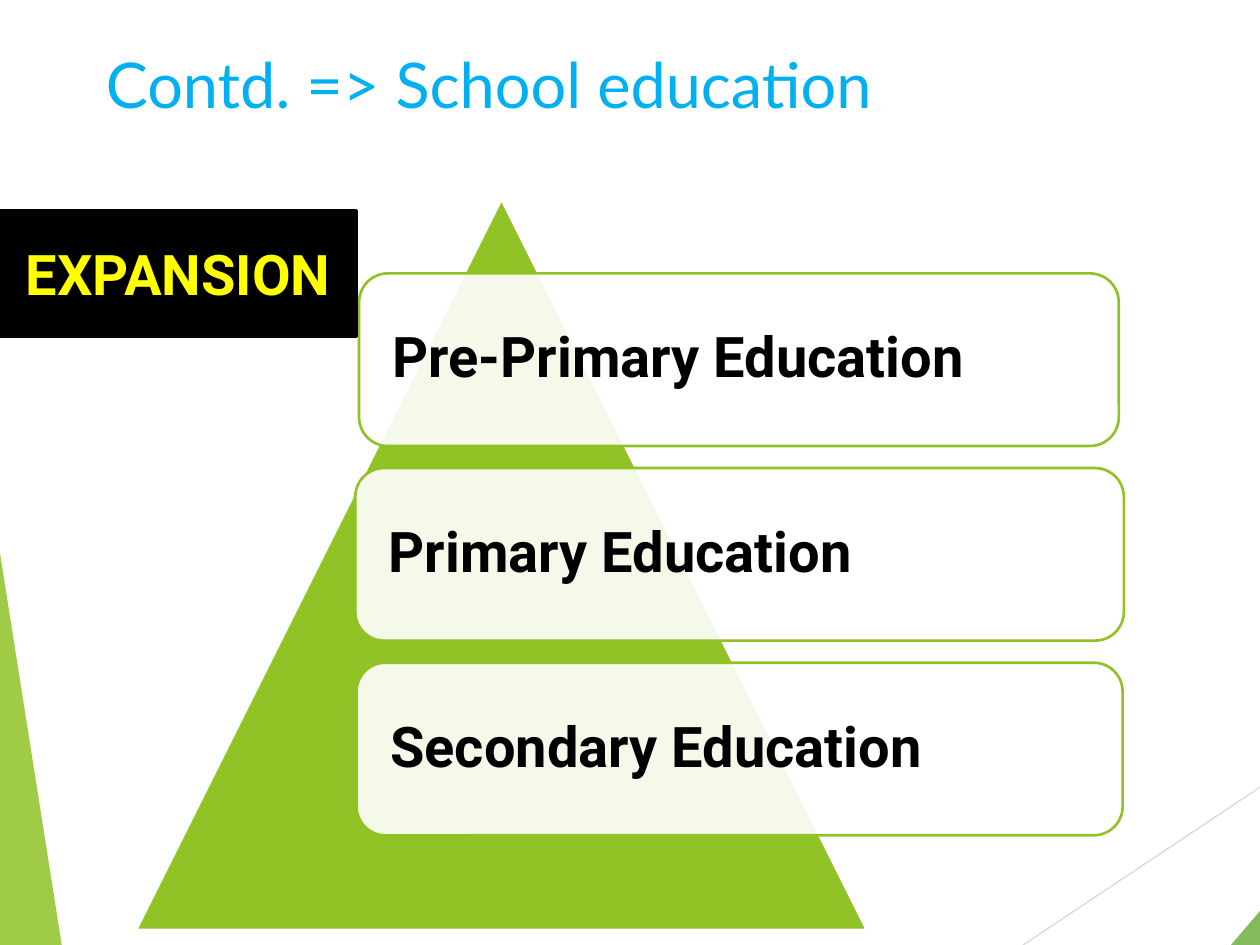
import dataclasses

import lxml.etree
import pptx
import pptx.dml.color
import pptx.enum.shapes
import pptx.enum.text
import pptx.oxml.ns
import pptx.util

Inches = pptx.util.Inches
Shape = pptx.enum.shapes.MSO_SHAPE
Align = pptx.enum.text.PP_ALIGN
Anchor = pptx.enum.text.MSO_ANCHOR
qn = pptx.oxml.ns.qn


@dataclasses.dataclass(frozen=True)
class Theme:
    """Colours, fonts and sizes of the slide."""
    green: str = "90C226"
    dark_green: str = "54A021"
    grey: str = "D9D9D9"
    white: str = "FFFFFF"
    black: str = "000000"
    yellow: str = "FFFF00"
    blue: str = "00B0F0"
    title_font: str = "Lato"
    body_font: str = "Roboto"
    title_size: int = 36
    body_size: int = 32
    outline: float = 1.5
    hairline: float = 0.75


THEME = Theme()


def rgb(value):
    """Turn a hex string into a colour."""
    return pptx.dml.color.RGBColor.from_string(value)


def add_shape(page, kind, frame, fill, line=None, opacity=100, adjustment=None):
    """Add a filled preset shape, with an outline when a line colour is given."""
    shape = page.shapes.add_shape(kind, *map(Inches, frame))
    shape.shadow.inherit = False
    if adjustment is not None:
        shape.adjustments[0] = adjustment
    shape.fill.solid()
    shape.fill.fore_color.rgb = rgb(fill)
    if opacity < 100:
        colour = shape.fill._xPr.find(qn("a:solidFill"))[0]
        lxml.etree.SubElement(colour, qn("a:alpha"), val=str(opacity * 1000))
    if line:
        shape.line.color.rgb = rgb(line)
        shape.line.width = pptx.util.Pt(THEME.outline)
    else:
        shape.line.fill.background()
    return shape


def add_line(page, start, end):
    """Add a thin grey line without a shadow."""
    line = page.shapes.add_connector(
        pptx.enum.shapes.MSO_CONNECTOR.STRAIGHT, *map(Inches, start + end))
    line.line.color.rgb = rgb(THEME.grey)
    line.line.width = pptx.util.Pt(THEME.hairline)
    lxml.etree.SubElement(line._element.spPr, qn("a:effectLst"))


def set_text(shape, text, font, size, colour, bold, align, anchor):
    """Write one formatted paragraph into a shape."""
    frame = shape.text_frame
    frame.text = text
    frame.word_wrap = True
    frame.auto_size = pptx.enum.text.MSO_AUTO_SIZE.NONE
    frame.vertical_anchor = anchor
    para = frame.paragraphs[0]
    para.alignment = align
    span = para.runs[0].font
    span.name, span.size, span.bold = font, pptx.util.Pt(size), bold
    span.color.rgb = rgb(colour)


def add_backdrop(page):
    """Draw the slanted line and corner triangles."""
    add_line(page, (13.33, 4.03), (8.12, 7.5))
    add_shape(page, Shape.ISOSCELES_TRIANGLE, (9.77, 3.33, 3.56, 4.17),
              THEME.dark_green, opacity=72, adjustment=1)
    add_shape(page, Shape.ISOSCELES_TRIANGLE, (0, 4.39, 0.49, 3.11),
              THEME.green, opacity=85, adjustment=0)


def add_title(page, text):
    """Place and format the slide title."""
    title = page.shapes.title
    title.left, title.top, title.width, title.height = map(
        Inches, (0.74, 0.31, 9.4, 0.87))
    set_text(title, text, THEME.title_font, THEME.title_size, THEME.blue,
             False, Align.LEFT, Anchor.TOP)


def add_level(page, text, frame):
    """Add a translucent card naming one level of education."""
    card = add_shape(page, Shape.ROUNDED_RECTANGLE, frame, THEME.white,
                     THEME.green, opacity=90)
    set_text(card, text, THEME.body_font, THEME.body_size, THEME.black,
             True, Align.LEFT, Anchor.MIDDLE)
    card.text_frame.margin_left = card.text_frame.margin_right = Inches(0.2)
    card.text_frame.paragraphs[0].line_spacing = 0.9


def add_pyramid(page, levels):
    """Draw the pyramid and its evenly stacked level cards."""
    add_shape(page, Shape.ISOSCELES_TRIANGLE, (1.08, 1.58, 5.8, 5.8),
              THEME.green, THEME.white)
    top, pitch, height = 2.17, 1.545, 1.37
    for index, (text, left, width) in enumerate(levels):
        add_level(page, text, (left, top + index * pitch, width, height))


def add_badge(page, text):
    """Add the black badge at the left edge."""
    badge = add_shape(page, Shape.RECTANGLE, (0, 1.67, 2.83, 1),
                      THEME.black, THEME.black)
    set_text(badge, text, THEME.body_font, THEME.body_size, THEME.yellow,
             True, Align.CENTER, Anchor.MIDDLE)


def main():
    """Build and save the slide."""
    deck = pptx.Presentation()
    deck.slide_width, deck.slide_height = Inches(10), Inches(7.5)
    page = deck.slides.add_slide(deck.slide_layouts.get_by_name("Title Only"))
    add_backdrop(page)
    add_title(page, "Contd. => School education")
    add_pyramid(page, [
        ("Pre-Primary Education", 2.85, 6.03),
        ("Primary Education", 2.82, 6.1),
        ("Secondary Education", 2.83, 6.08),
    ])
    add_badge(page, "EXPANSION")
    deck.save("out.pptx")


if __name__ == "__main__":
    main()
